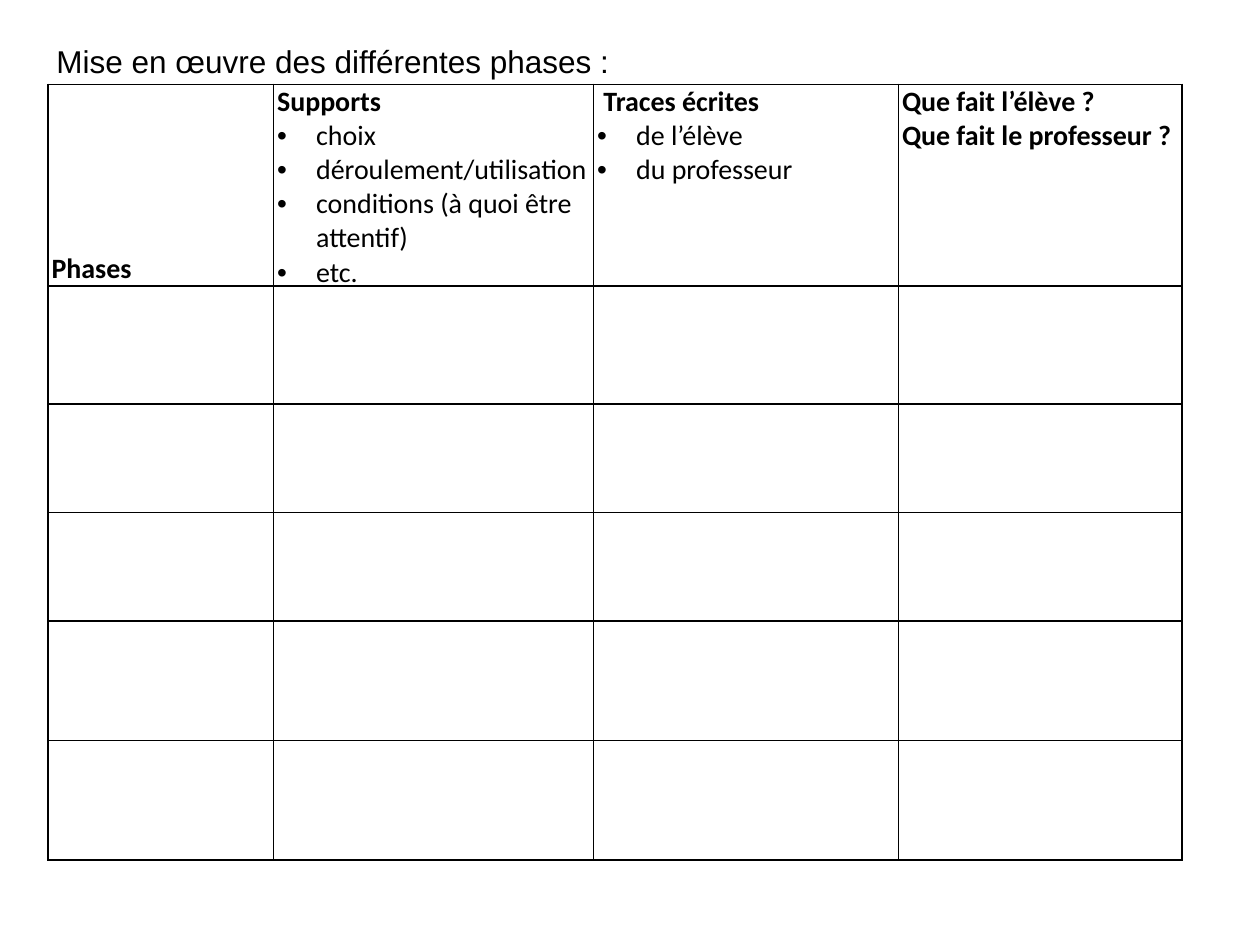
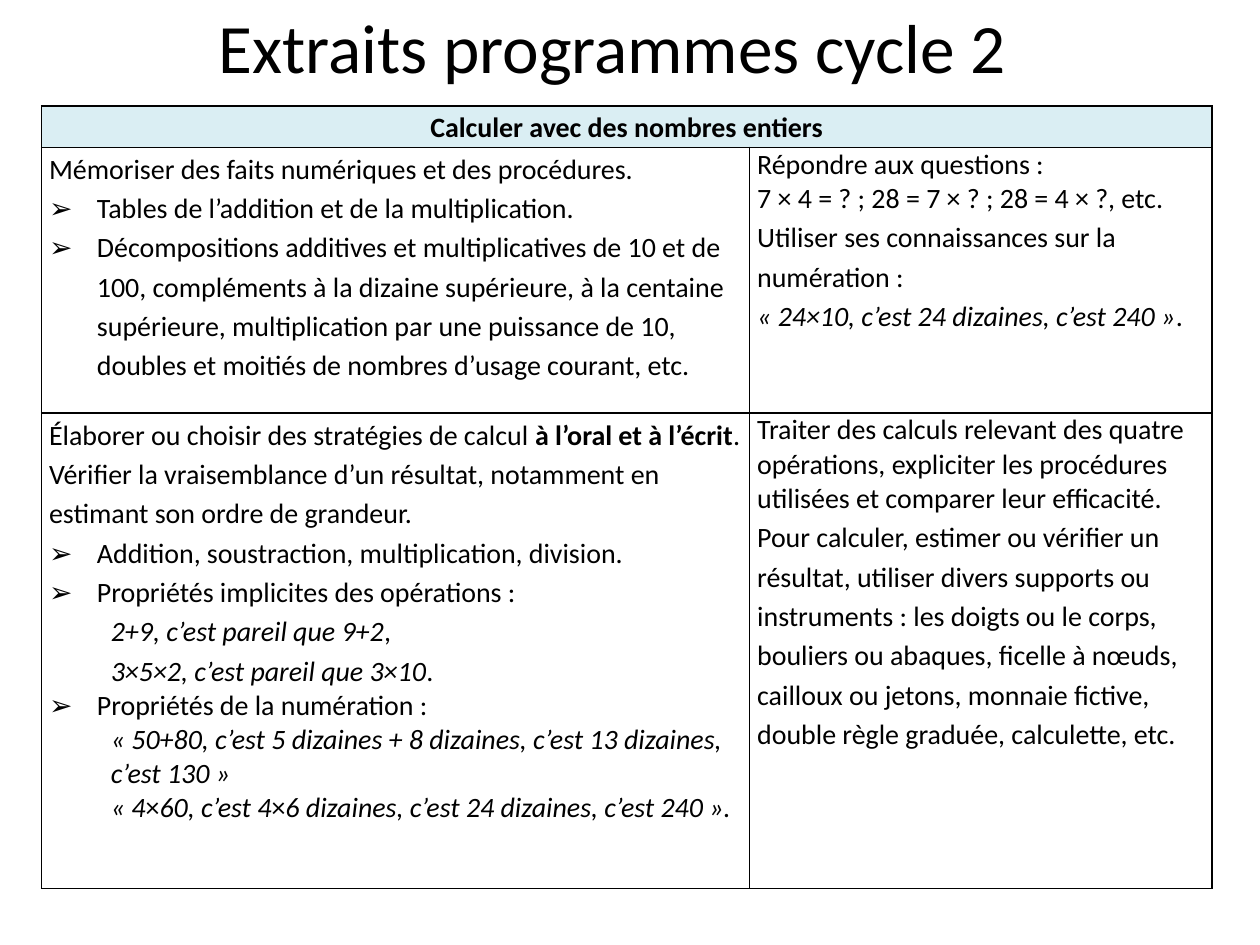
from lxml import etree
from pptx import Presentation
from pptx import util as u
from pptx.dml.color import RGBColor
from pptx.enum import text
from pptx.oxml import ns

BLACK = RGBColor(0x00, 0x00, 0x00)
WHITE = RGBColor(0xFF, 0xFF, 0xFF)
PALE_BLUE = RGBColor(0xDA, 0xEE, 0xF3)
LEFT, CENTER = text.PP_ALIGN.LEFT, text.PP_ALIGN.CENTER
TOP, MIDDLE, BOTTOM = text.MSO_ANCHOR.TOP, text.MSO_ANCHOR.MIDDLE, text.MSO_ANCHOR.BOTTOM
LOOSE = 1.15

presentation = Presentation()
presentation.slide_width, presentation.slide_height = u.Inches(10), u.Inches(7.5)
COLUMN = presentation.slide_width / 100
ROW = presentation.slide_height / 100

INDENTS = {
    "plain": (0, 0, None),
    "dot": (3.1, -3.1, "•"),
    "arrow": (3.8, -3.8, "➢"),
    "example": (4.9, 0, None),
}


def write(frame, paragraphs, size=16, font="Calibri", align=LEFT):
    frame.word_wrap = True
    for index, (style, spacing, wording) in enumerate(paragraphs):
        paragraph = frame.paragraphs[0] if index == 0 else frame.add_paragraph()
        paragraph.alignment = align
        paragraph.line_spacing = spacing
        margin, indent, bullet = INDENTS[style]
        properties = paragraph._p.get_or_add_pPr()
        properties.set("marL", str(int(margin * COLUMN)))
        properties.set("indent", str(int(indent * COLUMN)))
        if bullet:
            etree.SubElement(properties, ns.qn("a:buFont"), typeface="Arial")
            etree.SubElement(properties, ns.qn("a:buChar"), char=bullet)
        paragraph.font.size = u.Pt(size)
        paragraph.font.name = font
        paragraph.font.color.rgb = BLACK
        mark = "*" if "*" in wording else "_"
        for position, part in enumerate(wording.split(mark)):
            if part:
                run = paragraph.add_run()
                run.text = part
                if position % 2 and mark == "*":
                    run.font.bold = True
                elif position % 2:
                    run.font.italic = True


def add_grid(slide, left, top, widths, heights, margin):
    table = slide.shapes.add_table(
        len(heights), len(widths), int(left * COLUMN), int(top * ROW),
        int(sum(widths) * COLUMN), int(sum(heights) * ROW)).table
    table.first_row = table.horz_banding = False
    for column, width in zip(table.columns, widths):
        column.width = int(width * COLUMN)
    for row, height in zip(table.rows, heights):
        row.height = int(height * ROW)
    for cell in table.iter_cells():
        cell.margin_left = cell.margin_right = int(margin * COLUMN)
        cell.margin_top = cell.margin_bottom = 0
        properties = cell._tc.get_or_add_tcPr()
        for side in ("lnL", "lnR", "lnT", "lnB"):
            border = etree.SubElement(properties, ns.qn("a:" + side), w=str(u.Pt(1)))
            solid = etree.SubElement(border, ns.qn("a:solidFill"))
            etree.SubElement(solid, ns.qn("a:srgbClr"), val=str(BLACK))
        cell.fill.solid()
        cell.fill.fore_color.rgb = WHITE
    return table


blank = presentation.slide_layouts[6]
phases_slide = presentation.slides.add_slide(blank)
programme_slide = presentation.slides.add_slide(blank)

titles = [
    (phases_slide, "Mise en œuvre des différentes phases :", 18, "Arial", LEFT, TOP,
     (3.5, 0.5, 93, 15.9), 3.9),
    (programme_slide, "Extraits programmes cycle 2", 39.6, "Calibri", CENTER, MIDDLE,
     (3.6, 1.7, 90, 6.3), 0.6),
]
for slide, wording, size, font, align, anchor, (left, top, width, height), inset in titles:
    title = slide.shapes.add_textbox(
        int(left * COLUMN), int(top * ROW), int(width * COLUMN), int(height * ROW))
    title.text_frame.margin_top = int(inset * ROW)
    title.text_frame.vertical_anchor = anchor
    write(title.text_frame, [("plain", 1.0, wording)], size, font, align)

phases_table = add_grid(
    phases_slide, 3.8, 8.93, [17.9, 25.4, 24.2, 22.5],
    [21.33, 12.5, 11.47, 11.47, 12.67, 12.67], 0.3)
phase_headings = [
    [("plain", 1.0, "*Phases*")],
    [("plain", 1.0, "*Supports*"),
     ("dot", 1.0, "choix"),
     ("dot", 1.0, "déroulement/utilisation"),
     ("dot", 1.0, "conditions (à quoi être attentif)"),
     ("dot", 1.0, "etc.")],
    [("plain", 1.0, " *Traces écrites*"),
     ("dot", 1.0, "de l’élève"),
     ("dot", 1.0, "du professeur")],
    [("plain", 1.0, "*Que fait l’élève ?*"),
     ("plain", 1.0, "*Que fait le professeur ?*")],
]
for index, heading in enumerate(phase_headings):
    write(phases_table.cell(0, index).text_frame, heading)
phases_table.cell(0, 0).vertical_anchor = BOTTOM

programme_table = add_grid(
    programme_slide, 3.3, 11.2, [56.2, 36.7], [4.4, 28.13, 50.27], 0.6)
banner = programme_table.cell(0, 0)
banner.merge(programme_table.cell(0, 1))
banner.fill.fore_color.rgb = PALE_BLUE
write(banner.text_frame, [("plain", LOOSE, "*Calculer avec des nombres entiers*")], align=CENTER)

programme_rows = [
    [
        [("plain", LOOSE, "Mémoriser des faits numériques et des procédures."),
         ("arrow", LOOSE, "Tables de l’addition et de la multiplication."),
         ("arrow", LOOSE, "Décompositions additives et multiplicatives de 10 et de 100, "
          "compléments à la dizaine supérieure, à la centaine supérieure, multiplication "
          "par une puissance de 10, doubles et moitiés de nombres d’usage courant, etc.")],
        [("plain", 1.0, "Répondre aux questions :"),
         ("plain", 1.0, "7 × 4 = ? ; 28 = 7 × ? ; 28 = 4 × ?, etc."),
         ("plain", LOOSE, "Utiliser ses connaissances sur la numération :"),
         ("plain", LOOSE, "_« 24×10, c’est 24 dizaines, c’est 240 »_.")],
    ],
    [
        [("plain", LOOSE, "Élaborer ou choisir des stratégies de calcul *à l’oral et à l’écrit*."),
         ("plain", LOOSE, "Vérifier la vraisemblance d’un résultat, notamment en estimant "
          "son ordre de grandeur."),
         ("arrow", LOOSE, "Addition, soustraction, multiplication, division."),
         ("arrow", LOOSE, "Propriétés implicites des opérations :"),
         ("example", LOOSE, "_2+9, c’est pareil que 9+2_,"),
         ("example", LOOSE, "_3×5×2, c’est pareil que 3×10_."),
         ("arrow", 1.0, "Propriétés de la numération :"),
         ("example", 1.0, "_« 50+80, c’est 5 dizaines + 8 dizaines, c’est 13 dizaines, "
          "c’est 130 »_"),
         ("example", 1.0, "_« 4_×_60, c’est 4_×_6 dizaines, c’est 24 dizaines, c’est 240 »._")],
        [("plain", 1.0, "Traiter des calculs relevant des quatre opérations, expliciter "
          "les procédures utilisées et comparer leur efficacité."),
         ("plain", LOOSE, "Pour calculer, estimer ou vérifier un résultat, utiliser divers "
          "supports ou instruments : les doigts ou le corps, bouliers ou abaques, ficelle "
          "à nœuds, cailloux ou jetons, monnaie fictive, double règle graduée, "
          "calculette, etc.")],
    ],
]
for row_index, row in enumerate(programme_rows, start=1):
    for column_index, paragraphs in enumerate(row):
        write(programme_table.cell(row_index, column_index).text_frame, paragraphs)

presentation.save("out.pptx")
